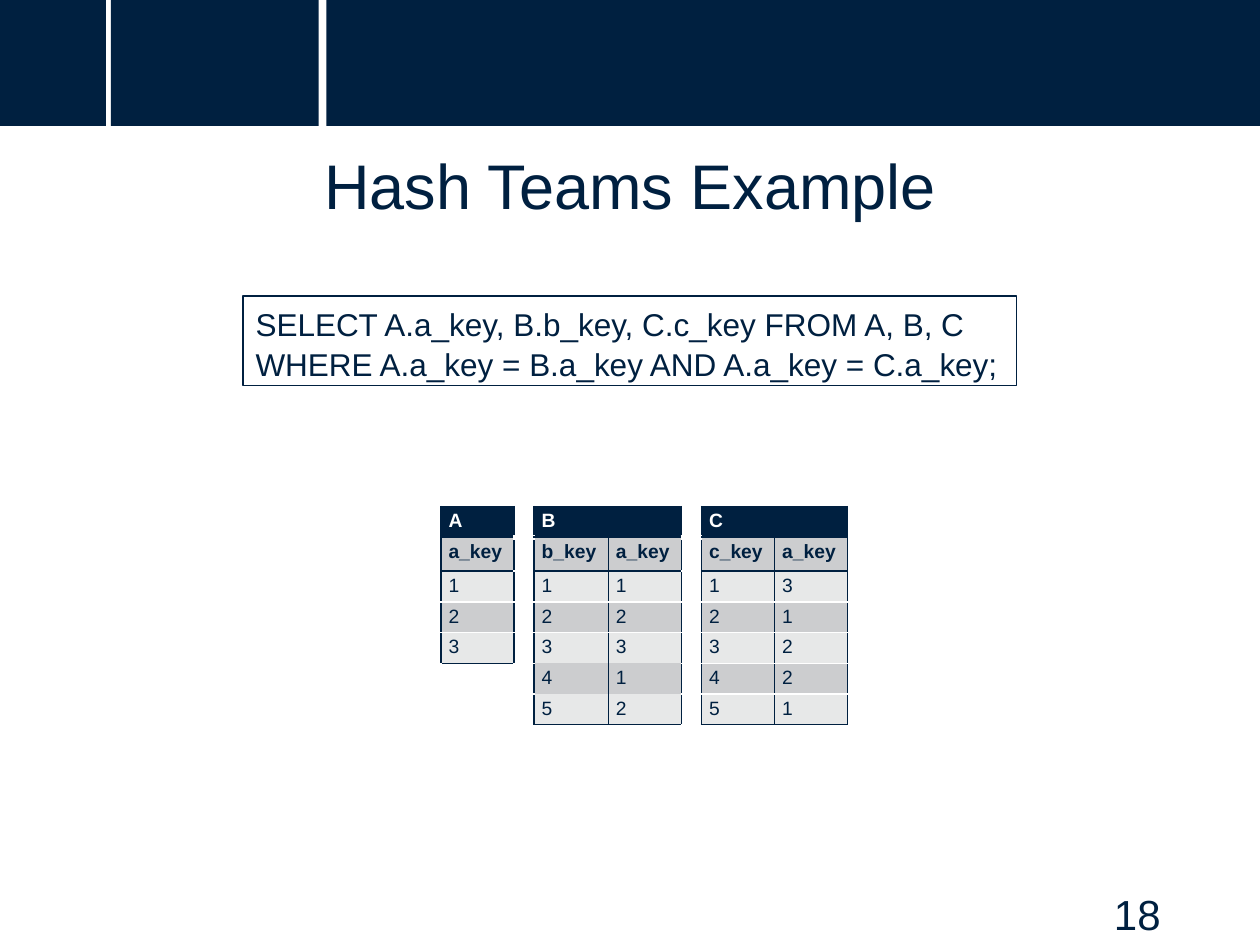
import pptx
import pptx.dml.color
import pptx.enum.shapes
import pptx.enum.text
import pptx.oxml
import pptx.oxml.ns
import pptx.util
from pptx.util import Inches

NAVY = pptx.dml.color.RGBColor(0x00, 0x20, 0x40)
WHITE = pptx.dml.color.RGBColor(0xFF, 0xFF, 0xFF)
DARK_BAND = pptx.dml.color.RGBColor(0xCC, 0xCD, 0xCF)
LIGHT_BAND = pptx.dml.color.RGBColor(0xE7, 0xE8, 0xE8)
FONT = "Arial"

# None leaves a cell empty; columns 1 and 4 separate the three relations
ROWS = [
    ["A", None, "B", None, None, "C", None],
    ["a_key", None, "b_key", "a_key", None, "c_key", "a_key"],
    ["1", None, "1", "1", None, "1", "3"],
    ["2", None, "2", "2", None, "2", "1"],
    ["3", None, "3", "3", None, "3", "2"],
    [None, None, "4", "1", None, "4", "2"],
    [None, None, "5", "2", None, "5", "1"],
]
COLUMN_WIDTHS = [0.58, 0.14, 0.59, 0.58, 0.14, 0.58, 0.58]
ROW_HEIGHTS = [0.23, 0.27] + [0.23] * 5
GAP_COLUMNS = (1, 4)
B_COLUMNS = (2, 3)
LAST_ROW = len(ROWS) - 1
LAST_A_ROW = 4


def add_run(paragraph, text, size, color=NAVY, bold=False):
    run = paragraph.add_run()
    run.text = text
    run.font.name = FONT
    run.font.size = pptx.util.Pt(size)
    run.font.bold = bold
    run.font.color.rgb = color


def add_bar(slide, left, width):
    bar = slide.shapes.add_shape(
        pptx.enum.shapes.MSO_SHAPE.RECTANGLE, Inches(left), 0, Inches(width), Inches(1))
    bar.shadow.inherit = False
    bar.fill.solid()
    bar.fill.fore_color.rgb = NAVY
    bar.line.fill.background()


def add_text(slide, box, lines, size, alignment, top_margin=0.05, line_spacing=None):
    shape = slide.shapes.add_textbox(*[Inches(length) for length in box])
    frame = shape.text_frame
    frame.word_wrap = True
    frame.margin_top = Inches(top_margin)
    for index, line in enumerate(lines):
        paragraph = frame.add_paragraph() if index else frame.paragraphs[0]
        paragraph.alignment = alignment
        paragraph.line_spacing = line_spacing
        add_run(paragraph, line, size)
    return shape


def set_border(cell, side, color, width=1):
    """Draw one side (L, R, T or B) of a cell; no colour means no line."""
    fill = f'<a:solidFill><a:srgbClr val="{color}"/></a:solidFill>' if color else "<a:noFill/>"
    border = pptx.oxml.parse_xml(
        f'<a:ln{side} {pptx.oxml.ns.nsdecls("a")} w="{pptx.util.Pt(width)}">{fill}</a:ln{side}>')
    cell._tc.get_or_add_tcPr().append(border)


def border_colors(row, column):
    """Return the colours of the left, right, top and bottom sides."""
    if column in GAP_COLUMNS:
        left = WHITE if column == 1 and row > LAST_A_ROW else NAVY
        return left, NAVY, WHITE, WHITE
    if column == 0 and row > LAST_A_ROW:
        return WHITE, WHITE, NAVY if row == LAST_A_ROW + 1 else WHITE, WHITE
    top = NAVY if row <= 2 else WHITE
    last_row = LAST_A_ROW if column == 0 else LAST_ROW
    bottom = NAVY if row <= 1 or row == last_row else WHITE
    if column in B_COLUMNS:
        # The last three rows of B have no lines between them
        top = None if row > LAST_A_ROW else top
        bottom = None if LAST_A_ROW <= row < LAST_ROW else bottom
    return NAVY, NAVY, top, bottom


def fill_color(row, column):
    if column in GAP_COLUMNS or (column == 0 and row > LAST_A_ROW):
        return WHITE
    if row == 0:
        return NAVY
    return DARK_BAND if row % 2 else LIGHT_BAND


def format_cell(cell, row, column, text):
    cell.margin_left = cell.margin_right = Inches(0.06)
    cell.margin_top = cell.margin_bottom = Inches(0.03)
    for side, color in zip("LRTB", border_colors(row, column)):
        thick = column in GAP_COLUMNS and row == 0 and side == "B"
        set_border(cell, side, color, 3 if thick else 1)
    cell.fill.solid()
    cell.fill.fore_color.rgb = fill_color(row, column)
    paragraph = cell.text_frame.paragraphs[0]
    if text:
        add_run(paragraph, text, 11, NAVY if row else WHITE, bold=row < 2)
    else:
        # Keep empty cells from stretching their row
        paragraph._p.append(pptx.oxml.parse_xml(
            f'<a:endParaRPr {pptx.oxml.ns.nsdecls("a")} sz="1100"/>'))


def add_relations(slide):
    frame = slide.shapes.add_table(
        len(ROWS), len(COLUMN_WIDTHS), Inches(3.5), Inches(4.02),
        Inches(sum(COLUMN_WIDTHS)), Inches(sum(ROW_HEIGHTS)))
    table = frame.table
    table.first_row = table.horz_banding = False
    for column, width in zip(table.columns, COLUMN_WIDTHS):
        column.width = Inches(width)
    for row, height in zip(table.rows, ROW_HEIGHTS):
        row.height = Inches(height)
    for row, texts in enumerate(ROWS):
        for column, text in enumerate(texts):
            format_cell(table.cell(row, column), row, column, text)
    for column in (2, 5):
        table.cell(0, column).merge(table.cell(0, column + 1))


def main():
    presentation = pptx.Presentation()
    presentation.slide_width = Inches(10)
    presentation.slide_height = Inches(7.5)
    slide = presentation.slides.add_slide(presentation.slide_layouts[6])
    align = pptx.enum.text.PP_ALIGN

    # Header band
    for left, width in [(0, 0.84), (0.88, 1.65), (2.59, 7.41)]:
        add_bar(slide, left, width)

    # Title
    add_text(slide, (0.69, 1.05, 8.62, 0.97), ["Hash Teams Example"], 36, align.CENTER, 0.11)

    # Relations A, B and C
    add_relations(slide)

    # Page number
    add_text(slide, (7.06, 6.95, 2.25, 0.4), ["18"], 24, align.RIGHT, 0.1)

    # Query
    query = add_text(
        slide, (1.93, 2.35, 6.14, 0.71),
        ["SELECT A.a_key, B.b_key, C.c_key FROM A, B, C",
         "WHERE A.a_key = B.a_key AND A.a_key = C.a_key;"],
        18, align.LEFT, line_spacing=1.06)
    query.line.color.rgb = NAVY
    query.line.width = pptx.util.Pt(0.75)

    presentation.save("out.pptx")


if __name__ == "__main__":
    main()
